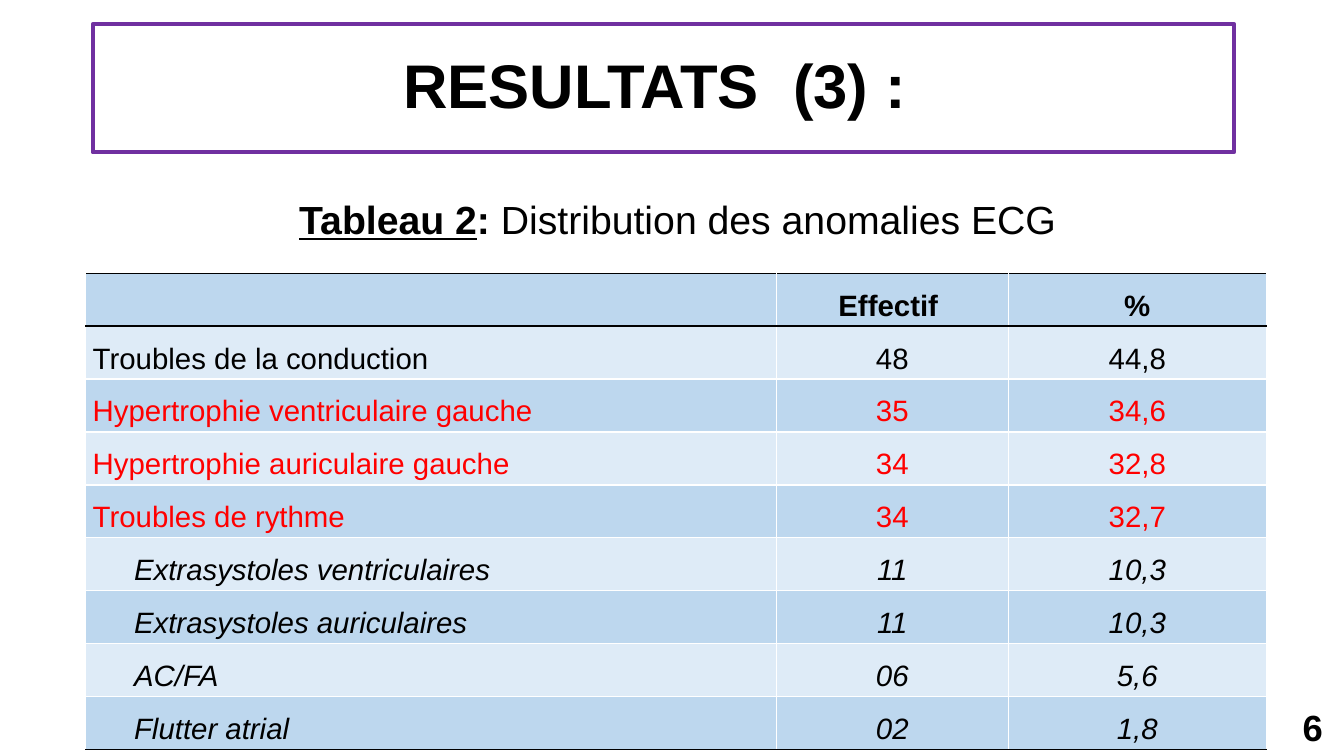
from dataclasses import dataclass

from lxml import etree
from pptx import Presentation
from pptx.dml.color import RGBColor
from pptx.enum.text import MSO_ANCHOR, PP_ALIGN
from pptx.oxml.ns import qn
from pptx.util import Pt

PX = 9144
CENTER, RIGHT, JUSTIFY = PP_ALIGN.CENTER, PP_ALIGN.RIGHT, PP_ALIGN.JUSTIFY
MIDDLE = MSO_ANCHOR.MIDDLE


@dataclass(frozen=True)
class Theme:
    font: str = "Arial"
    ink: str = "000000"
    alert: str = "FF0000"
    frame: str = "7030A0"
    grid: str = "FFFFFF"
    bands: tuple = ("BDD7EE", "DEEBF7")
    title_size: int = 44
    caption_size: int = 28
    number_size: int = 26
    table_size: int = 21


THEME = Theme()
COLUMNS = (685, 230, 256)
INDENT = 41
HEADER = ("", "Effectif ", "%")
MAIN_ROWS = (
    ("Troubles de la conduction", "48", "44,8"),
    ("Hypertrophie ventriculaire gauche", "35", "34,6"),
    ("Hypertrophie auriculaire gauche", "34", "32,8"),
    ("Troubles de rythme", "34", "32,7"),
)
RHYTHM_ROWS = (
    ("Extrasystoles ventriculaires", "11", "10,3"),
    ("Extrasystoles auriculaires", "11", "10,3"),
    ("AC/FA", "06", "5,6"),
    ("Flutter atrial", "02", "1,8"),
)


def box(*lengths):
    return [n * PX for n in lengths]


def rgb(color):
    return RGBColor.from_string(color)


def style_run(r, size, color=THEME.ink, bold=False, italic=False, underline=False):
    f = r.font
    f.name, f.size = THEME.font, Pt(size)
    f.bold, f.italic, f.underline = bold, italic, underline
    f.color.rgb = rgb(color)


def add_title(s, text, *bounds):
    sp = s.shapes.title
    sp.left, sp.top, sp.width, sp.height = box(*bounds)
    sp.line.color.rgb = rgb(THEME.frame)
    sp.line.width = Pt(3)
    tf = sp.text_frame
    tf.text = text
    tf.vertical_anchor = MIDDLE
    p = tf.paragraphs[0]
    p.alignment = CENTER
    p.line_spacing = 0.9
    style_run(p.runs[0], THEME.title_size, bold=True)


def add_text(s, parts, size, align, *bounds):
    tf = s.shapes.add_textbox(*box(*bounds)).text_frame
    tf.word_wrap = True
    tf.vertical_anchor = MIDDLE
    p = tf.paragraphs[0]
    p.alignment = align
    for text, look in parts:
        r = p.add_run()
        r.text = text
        style_run(r, size, **look)


def set_borders(cell, top, bottom):
    tc_pr = cell._tc.get_or_add_tcPr()
    sides = {"L": THEME.grid, "R": THEME.grid, "T": top, "B": bottom}
    for side, color in sides.items():
        ln = etree.SubElement(tc_pr, qn(f"a:ln{side}"), w=str(Pt(1)))
        fill = etree.SubElement(ln, qn("a:solidFill"))
        etree.SubElement(fill, qn("a:srgbClr"), val=color)


def fill_cell(cell, text, align, band, look, indent):
    cell.margin_left = cell.margin_right = 7 * PX
    cell.margin_top = cell.margin_bottom = 0
    cell.fill.solid()
    cell.fill.fore_color.rgb = rgb(band)
    p = cell.text_frame.paragraphs[0]
    p.text = text
    p.alignment = align
    p.line_spacing = 1.5
    if indent:
        p._p.get_or_add_pPr().set("marL", str(indent * PX))
    for r in p.runs:
        style_run(r, THEME.table_size, **look)


def add_results(s, *bounds):
    rows = [(HEADER, {"bold": True})]
    for i, row in enumerate(MAIN_ROWS):
        rows.append((row, {"color": THEME.alert if i else THEME.ink}))
    rows += [(row, {"italic": True}) for row in RHYTHM_ROWS]
    last = len(rows) - 1
    table = s.shapes.add_table(len(rows), len(COLUMNS), *box(*bounds)).table
    table.first_row = table.horz_banding = False
    for column, width in zip(table.columns, COLUMNS):
        column.width = width * PX
    for i, (row, look) in enumerate(rows):
        top = THEME.ink if i < 2 else THEME.grid
        bottom = THEME.ink if i in (0, last) else THEME.grid
        for j, text in enumerate(row):
            cell = table.cell(i, j)
            set_borders(cell, top, bottom)
            align = CENTER if j else JUSTIFY
            indent = INDENT if row in RHYTHM_ROWS and j == 0 else 0
            fill_cell(cell, text, align, THEME.bands[i % 2], look, indent)


def main():
    prs = Presentation()
    prs.slide_width, prs.slide_height = box(1333, 750)
    s = prs.slides.add_slide(prs.slide_layouts[5])
    add_title(s, "RESULTATS  (3) : ", 92, 24, 1132, 127)
    add_text(s, [("6", {"bold": True})], THEME.number_size, RIGHT, 1016, 700, 306, 43)
    add_results(s, 85, 271, sum(COLUMNS), 472)
    caption = [
        ("Tableau 2", {"bold": True, "underline": True}),
        (": ", {"bold": True}),
        ("Distribution des anomalies ECG", {}),
    ]
    add_text(s, caption, THEME.caption_size, CENTER, 87, 189, 1170, 57)
    prs.save("out.pptx")


if __name__ == "__main__":
    main()
